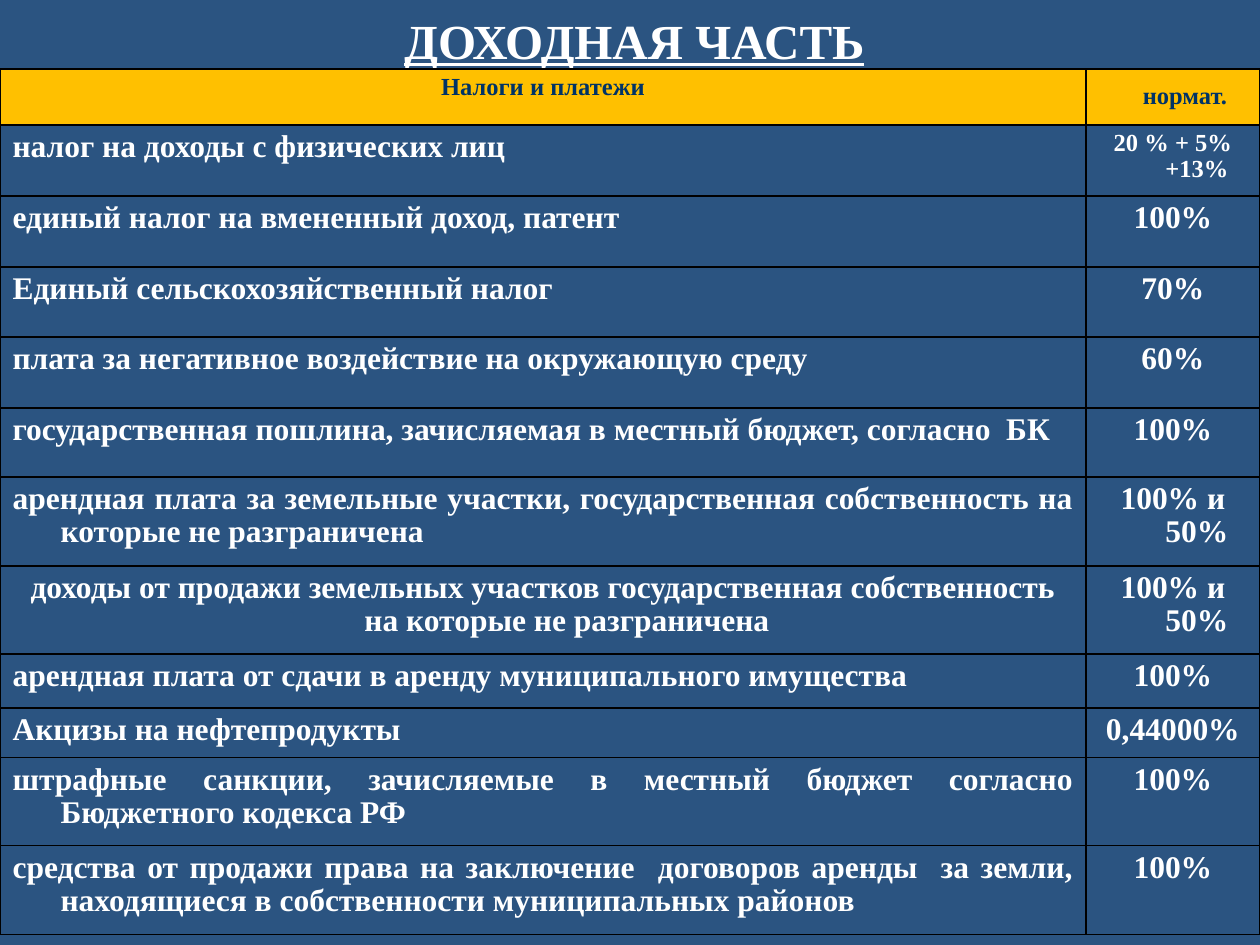
from lxml.etree import SubElement
from pptx import Presentation
from pptx.dml.color import RGBColor
from pptx.enum.text import MSO_ANCHOR, PP_ALIGN
from pptx.oxml.ns import qn
from pptx.util import Pt

SCALE = 914400 // 126
FONT = "Times New Roman"
BACKGROUND, WHITE, NAVY, GOLD, BLACK = "2B5481", "FFFFFF", "003366", "FFC000", "000000"
CENTER, JUSTIFY = PP_ALIGN.CENTER, PP_ALIGN.JUSTIFY
HANGING = (48, -48)

TITLE = "ДОХОДНАЯ ЧАСТЬ"
HEADERS = ["Налоги и платежи", "нормат."]
INCOMES = [
    (71, "налог на доходы с физических лиц", "20 % + 5%+13%"),
    (71, "единый налог на вмененный доход, патент", "100%"),
    (70, "Единый сельскохозяйственный налог", "70%"),
    (71, "плата за негативное воздействие на окружающую среду", "60%"),
    (69, "государственная пошлина, зачисляемая в местный бюджет, согласно  БК", "100%"),
    (89, "арендная плата за земельные участки, государственная собственность на которые не разграничена", "100% и 50%"),
    (88, "доходы от продажи земельных участков государственная собственность на которые не разграничена", "100% и 50%"),
    (54, "арендная плата от сдачи в аренду муниципального имущества", "100%"),
    (50, "Акцизы на нефтепродукты", "0,44000%"),
    (88, "штрафные санкции, зачисляемые в местный бюджет согласно Бюджетного кодекса РФ", "100%"),
    (89, "средства от продажи права на заключение  договоров аренды  за земли, находящиеся в собственности муниципальных районов", "100%"),
]
HEADER_HEIGHT = 56
COLUMN_WIDTHS = [1086, 174]
CENTERED_INCOME = 7
SMALL_RATE = 1


def px(value):
    return value * SCALE


def color(value):
    return RGBColor.from_string(value)


def style_font(font, size, value):
    font.name = FONT
    font.size = Pt(size)
    font.bold = True
    font.color.rgb = color(value)


def add_borders(cell):
    properties = cell._tc.get_or_add_tcPr()
    for position, side in enumerate(("lnL", "lnR", "lnT", "lnB")):
        line = SubElement(properties, qn(f"a:{side}"), w=str(Pt(1)))
        fill = SubElement(line, qn("a:solidFill"))
        SubElement(fill, qn("a:srgbClr"), val=BLACK)
        properties.insert(position, line)


def fill_cell(cell, text, size, value, alignment, fill=None, indents=HANGING):
    cell.text_frame.text = text
    paragraph = cell.text_frame.paragraphs[0]
    paragraph.alignment = alignment
    paragraph.line_spacing = 0.95
    properties = paragraph._p.get_or_add_pPr()
    for name, indent in zip(("marL", "indent"), indents):
        properties.set(name, str(px(indent)))
    style_font(paragraph.runs[0].font, size, value)
    if fill:
        cell.fill.solid()
        cell.fill.fore_color.rgb = color(fill)
    else:
        cell.fill.background()
    add_borders(cell)


presentation = Presentation()
presentation.slide_width, presentation.slide_height = px(1260), px(945)
slide = presentation.slides.add_slide(presentation.slide_layouts[6])
slide.background.fill.solid()
slide.background.fill.fore_color.rgb = color(BACKGROUND)

title = slide.shapes.add_textbox(px(392), px(4), px(498), px(72))
title.text_frame.text = TITLE
title.text_frame.word_wrap = False
title_font = title.text_frame.paragraphs[0].runs[0].font
style_font(title_font, 28, WHITE)
title_font.underline = True

heights = [HEADER_HEIGHT] + [height for height, _, _ in INCOMES]
table = slide.shapes.add_table(
    len(heights), len(COLUMN_WIDTHS), 0, px(69), px(sum(COLUMN_WIDTHS)), px(sum(heights))
).table
table.horz_banding = False
for column, width in zip(table.columns, COLUMN_WIDTHS):
    column.width = px(width)
for row, height in zip(table.rows, heights):
    row.height = px(height)

for column, (header, indents) in enumerate(zip(HEADERS, (HANGING, (24, 0)))):
    fill_cell(table.cell(0, column), header, 14, NAVY, CENTER, GOLD, indents)
table.cell(0, 1).vertical_anchor = MSO_ANCHOR.MIDDLE

for row, (_, income, rate) in enumerate(INCOMES, start=1):
    alignment = CENTER if row == CENTERED_INCOME else JUSTIFY
    fill_cell(table.cell(row, 0), income, 18, WHITE, alignment)
    fill_cell(table.cell(row, 1), rate, 14 if row == SMALL_RATE else 18, WHITE, CENTER)

presentation.save("out.pptx")
